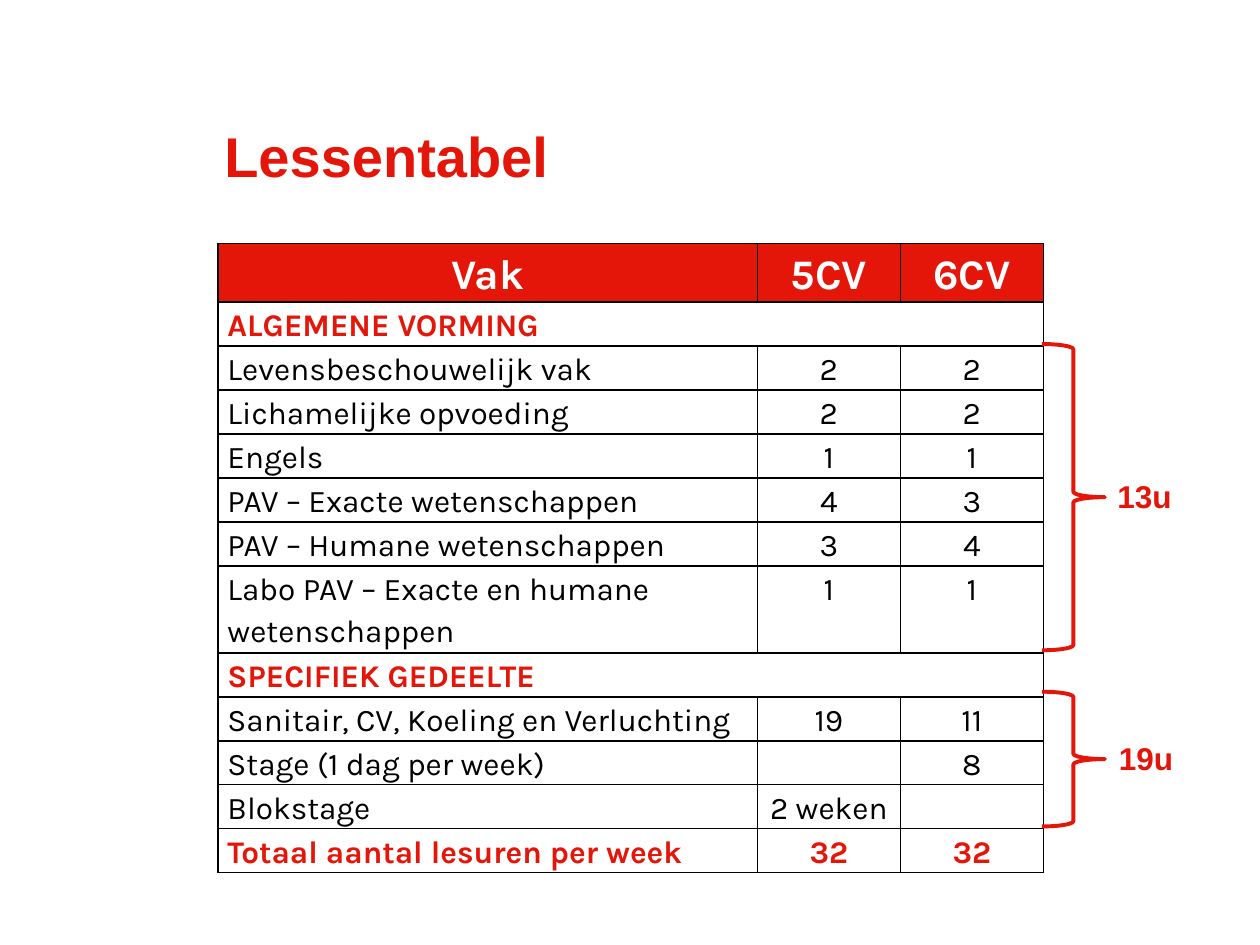
from dataclasses import dataclass
import pptx
import pptx.dml.color
import pptx.enum.shapes
import pptx.enum.text
import pptx.oxml
import pptx.oxml.ns
import pptx.util

Pt = pptx.util.Pt
RGBColor = pptx.dml.color.RGBColor
ALIGN = pptx.enum.text.PP_ALIGN

RED = RGBColor(0xE4, 0x16, 0x0A)
HEADER_RED = RGBColor(0xE4, 0x15, 0x09)
BLACK = RGBColor(0, 0, 0)
WHITE = RGBColor(255, 255, 255)

TABLE_LEFT, TABLE_TOP = 124.6, 139
COLUMN_WIDTHS = (308.2, 81.7, 81.7)
HEADER_HEIGHT, ROW_HEIGHT, TALL_HEIGHT = 33.7, 25.13, 48.5
BRACE_LEFT, BRACE_WIDTH = 595.4, 36


@dataclass(frozen=True)
class Row:
    subject: str
    fifth: str = ""
    sixth: str = ""
    kind: str = "subject"
    height: float = ROW_HEIGHT


@dataclass(frozen=True)
class Brace:
    top: float
    height: float
    label: str
    label_left: float
    label_top: float


ROWS = [
    Row("Vak", "5CV", "6CV", "header", HEADER_HEIGHT),
    Row("ALGEMENE VORMING", kind="section"),
    Row("Levensbeschouwelijk vak", "2", "2"),
    Row("Lichamelijke opvoeding", "2", "2"),
    Row("Engels", "1", "1"),
    Row("PAV – Exacte wetenschappen", "4", "3"),
    Row("PAV – Humane wetenschappen", "3", "4"),
    Row("Labo PAV – Exacte en humane wetenschappen", "1", "1", height=TALL_HEIGHT),
    Row("SPECIFIEK GEDEELTE", kind="section"),
    Row("Sanitair, CV, Koeling en Verluchting", "19", "11"),
    Row("Stage (1 dag per week)", "", "8"),
    Row("Blokstage", "2 weken"),
    Row("Totaal aantal lesuren per week", "32", "32", "total"),
]

BRACES = [
    Brace(196.6, 175, "13u", 631.4, 269.3),
    Brace(395.3, 77, "19u", 632.2, 419),
]


def write(tf, text: str, *, size: float = 18, font: str = "Arial",
          color: RGBColor = RED, bold: bool = True,
          align=ALIGN.LEFT, spacing: float = 1.0) -> None:
    p = tf.paragraphs[0]
    p.alignment = align
    p.line_spacing = spacing
    for target in (p.add_run(), p) if text else (p,):
        target.font.size = Pt(size)
        target.font.name = font
        target.font.bold = bold
        target.font.color.rgb = color
    if text:
        p.runs[0].text = text


def add_label(s, text: str, left: float, top: float, width: float, height: float,
              *, size: float = 18, margins=(7.2, 3.6, 7.2, 3.6), wrap: bool = False) -> None:
    tf = s.shapes.add_textbox(Pt(left), Pt(top), Pt(width), Pt(height)).text_frame
    tf.word_wrap = wrap
    tf.margin_left, tf.margin_top, tf.margin_right, tf.margin_bottom = map(Pt, margins)
    write(tf, text, size=size)


def set_borders(cell) -> None:
    props = cell._tc.get_or_add_tcPr()
    for side in "LRTB":
        props.append(pptx.oxml.parse_xml(
            f'<a:ln{side} {pptx.oxml.ns.nsdecls("a")} w="{Pt(1)}">'
            f'<a:solidFill><a:srgbClr val="{BLACK}"/></a:solidFill></a:ln{side}>'))


def fill_cell(cell, text: str, row: Row, column: int) -> None:
    header = row.kind == "header"
    cell.margin_left = cell.margin_right = Pt(5.4)
    cell.margin_top = cell.margin_bottom = 0
    set_borders(cell)
    if header:
        cell.fill.solid()
        cell.fill.fore_color.rgb = HEADER_RED
    else:
        cell.fill.background()
    write(cell.text_frame, text, font="Karla", size=24 if header else 18,
          color={"header": WHITE, "subject": BLACK}.get(row.kind, RED),
          bold=row.kind != "subject", spacing=1.15,
          align=ALIGN.CENTER if header or column else ALIGN.LEFT)


def add_timetable(s) -> None:
    frame = s.shapes.add_table(len(ROWS), len(COLUMN_WIDTHS), Pt(TABLE_LEFT), Pt(TABLE_TOP),
                               Pt(sum(COLUMN_WIDTHS)), Pt(sum(row.height for row in ROWS)))
    table = frame.table
    table.horz_banding = False
    for column, width in zip(table.columns, COLUMN_WIDTHS):
        column.width = Pt(width)
    for i, row in enumerate(ROWS):
        table.rows[i].height = Pt(row.height)
        for j, text in enumerate((row.subject, row.fifth, row.sixth)):
            fill_cell(table.cell(i, j), text, row, j)
        if row.kind == "section":
            table.cell(i, 0).merge(table.cell(i, 2))


def add_brace(s, brace: Brace) -> None:
    sp = s.shapes.add_shape(pptx.enum.shapes.MSO_SHAPE.RIGHT_BRACE, Pt(BRACE_LEFT),
                            Pt(brace.top), Pt(BRACE_WIDTH), Pt(brace.height))
    sp.shadow.inherit = False
    sp.fill.background()
    sp.line.color.rgb = HEADER_RED
    sp.line.width = Pt(2.25)
    add_label(s, brace.label, brace.label_left, brace.label_top, 46, 29)


def main() -> None:
    prs = pptx.Presentation()
    prs.slide_width, prs.slide_height = Pt(720), Pt(540)
    s = prs.slides.add_slide(prs.slide_layouts[6])
    add_label(s, "Lessentabel", 128.2, 66.2, 532, 40.3, size=32,
              margins=(0, 3, 7.2, 0), wrap=True)
    add_timetable(s)
    for brace in BRACES:
        add_brace(s, brace)
    prs.save("out.pptx")


if __name__ == "__main__":
    main()
